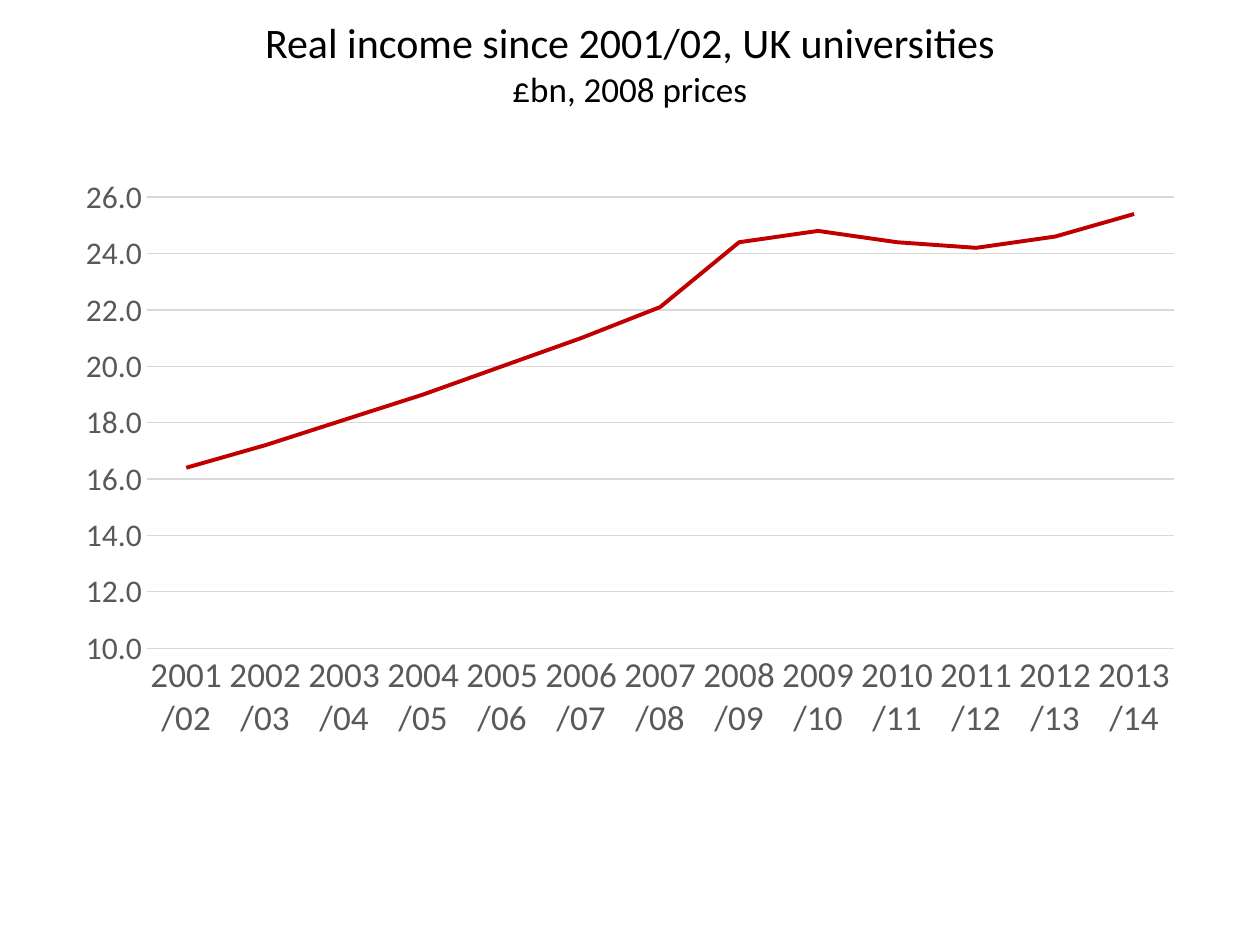
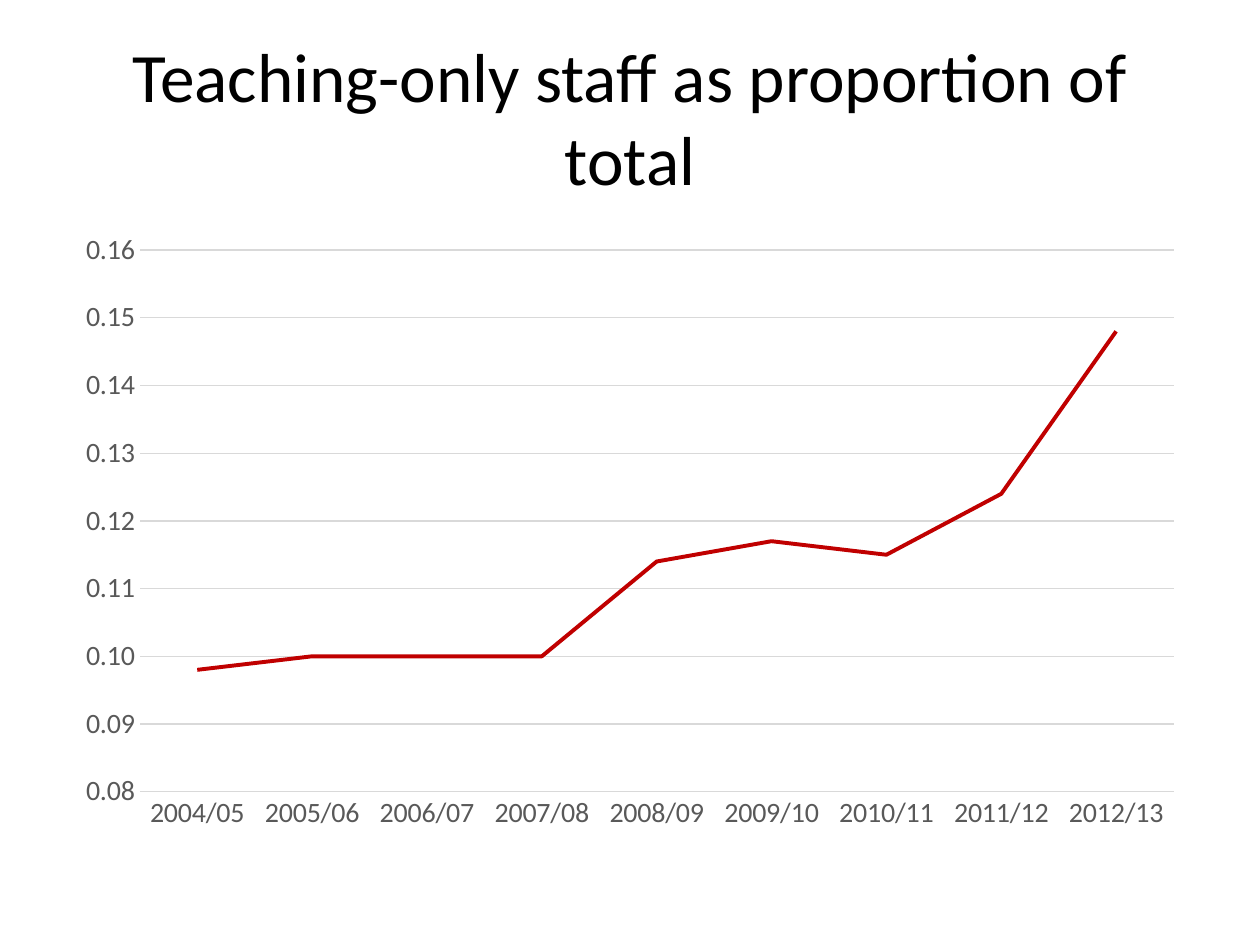
import pptx
import pptx.util
import pptx.chart.data
import pptx.dml.color
import pptx.enum.chart
import pptx.enum.text
from lxml import etree

COLS, ROWS = 20, 15
WIDE, HIGH = 10, 7.5
FONT = "Calibri"
HUES = {"ink": "000000", "label": "595959", "grid": "D9D9D9", "line": "C00000"}


def tint(name):
    return pptx.dml.color.RGBColor.from_string(HUES[name])


def apply(target, style):
    for key, value in style.items():
        setattr(target, key, value)


def place(box):
    left, top, wide, high = box
    col, row = WIDE / COLS, HIGH / ROWS
    return [pptx.util.Inches(n) for n in (left * col, top * row, wide * col, high * row)]


def set_font(font, size, hue):
    apply(font, {"name": FONT, "size": pptx.util.Pt(size), "bold": False})
    font.color.rgb = tint(hue)


def set_line(line, hue, width):
    line.color.rgb = tint(hue)
    line.width = pptx.util.Pt(width)


def add_title(slide, box, lines, base=0.05):
    title = slide.shapes.title
    apply(title, dict(zip(("left", "top", "width", "height"), place(box))))
    frame = title.text_frame
    apply(frame, {
        "word_wrap": True,
        "auto_size": pptx.enum.text.MSO_AUTO_SIZE.NONE,
        "vertical_anchor": pptx.enum.text.MSO_ANCHOR.MIDDLE,
        "margin_bottom": pptx.util.Inches(base),
    })
    para = frame.paragraphs[0]
    para.alignment = pptx.enum.text.PP_ALIGN.CENTER
    for index, (text, size) in enumerate(lines):
        if index:
            para.add_line_break()
        run = para.add_run()
        run.text = text
        set_font(run.font, size, "ink")


def set_plot(chart, box, plot):
    area = chart.plots[0]._element.getparent()
    space = etree.QName(area).namespace
    for old in area.findall(f"{{{space}}}layout"):
        area.remove(old)
    outer = etree.Element(f"{{{space}}}layout")
    area.insert(0, outer)
    layout = etree.SubElement(outer, f"{{{space}}}manualLayout")
    shares = {
        "x": (plot[0] - box[0]) / box[2],
        "y": (plot[1] - box[1]) / box[3],
        "w": plot[2] / box[2],
        "h": plot[3] / box[3],
    }
    items = {"layoutTarget": "inner", "xMode": "edge", "yMode": "edge", **shares}
    for tag, value in items.items():
        etree.SubElement(layout, f"{{{space}}}{tag}").set("val", str(value))


def set_axis(axis, size, style):
    none = pptx.enum.chart.XL_TICK_MARK.NONE
    apply(axis, {"major_tick_mark": none, "minor_tick_mark": none, **style})
    set_font(axis.tick_labels.font, size, "label")


def add_trend(slide, box, plot, years, values, sizes, scale, digits):
    data = pptx.chart.data.CategoryChartData()
    data.categories = years
    data.add_series("Series 1", values)
    kind = pptx.enum.chart.XL_CHART_TYPE.LINE
    chart = slide.shapes.add_chart(kind, *place(box), data).chart
    apply(chart, {"has_legend": False, "has_title": False})
    set_font(chart.font, 10, "ink")
    chart.plots[0].vary_by_categories = False
    set_plot(chart, box, plot)

    years_axis, value_axis = chart.category_axis, chart.value_axis
    set_axis(years_axis, sizes[0], {"has_major_gridlines": False})
    years_axis._element.txPr.bodyPr.set("rot", "0")
    set_line(years_axis.format.line, "grid", 0.75)

    low, high, step = scale
    set_axis(value_axis, sizes[1], {
        "minimum_scale": low,
        "maximum_scale": high,
        "major_unit": step,
        "has_major_gridlines": True,
    })
    apply(value_axis.tick_labels, {"number_format": digits, "number_format_is_linked": False})
    value_axis.format.line.fill.background()
    set_line(value_axis.major_gridlines.format.line, "grid", 0.75)

    series = chart.series[0]
    series.smooth = False
    series.marker.style = pptx.enum.chart.XL_MARKER_STYLE.NONE
    set_line(series.format.line, "line", 2.25)


def span(first, count):
    return [f"{year}/{(year + 1) % 100:02d}" for year in range(first, first + count)]


def add_slide(deck, title, trend):
    slide = deck.slides.add_slide(deck.slide_layouts[5])
    add_title(slide, **title)
    add_trend(slide, **trend)


def main():
    deck = pptx.Presentation()
    apply(deck, {
        "slide_width": pptx.util.Inches(WIDE),
        "slide_height": pptx.util.Inches(HIGH),
    })
    income = [16.4, 17.2, 18.1, 19, 20, 21, 22.1, 24.4, 24.8, 24.4, 24.2, 24.6, 25.4]
    staff = [0.098, 0.1, 0.1, 0.1, 0.114, 0.117, 0.115, 0.124, 0.148]
    add_slide(
        deck,
        {
            "box": (1, 0.52, 18, 1.46),
            "lines": [("Real income since 2001/02, UK universities", 24),
                      ("£bn, 2008 prices", 20)],
            "base": 0.3,
        },
        {
            "box": (1, 2.62, 18, 10.7),
            "plot": (2.33, 3.13, 16.3, 7.16),
            "years": span(2001, len(income)),
            "values": income,
            "sizes": (20, 18),
            "scale": (10, 26, 2),
            "digits": "0.0",
        },
    )
    add_slide(
        deck,
        {
            "box": (1, 0.6, 18, 2.5),
            "lines": [("Teaching-only staff as proportion of total", 39.6)],
        },
        {
            "box": (1, 3.5, 18, 9.9),
            "plot": (2.22, 3.97, 16.41, 8.6),
            "years": span(2004, len(staff)),
            "values": staff,
            "sizes": (16, 16),
            "scale": (0.08, 0.16, 0.01),
            "digits": "0.00",
        },
    )
    deck.save("out.pptx")


if __name__ == "__main__":
    main()
